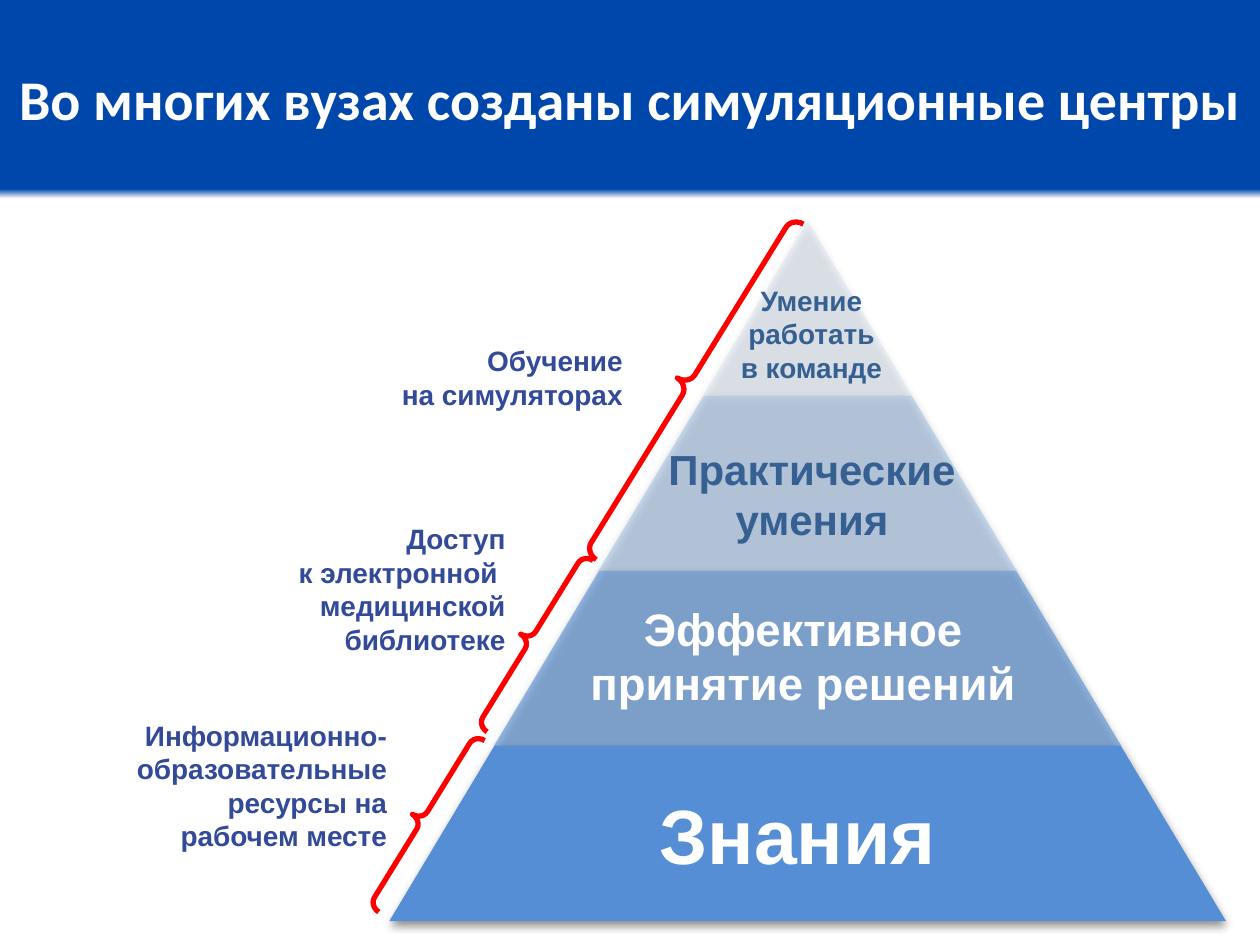
"""Build a slide with a four-level skills pyramid and braced notes."""
import copy
import dataclasses

import lxml.etree
import pptx
import pptx.dml.color
import pptx.enum.shapes
import pptx.enum.text
import pptx.oxml.ns
import pptx.util

Inches = pptx.util.Inches
Pt = pptx.util.Pt
Align = pptx.enum.text.PP_ALIGN
Kind = pptx.enum.shapes.MSO_SHAPE
qn = pptx.oxml.ns.qn


@dataclasses.dataclass(frozen=True)
class Theme:
    band: str = "0047AB"
    white: str = "FFFFFF"
    note: str = "324A98"
    dark: str = "376092"
    brace: str = "FF0000"
    shade: str = "000000"
    tiers: tuple = (("C6D9F1", 28), ("8EB4E3", 44), ("558ED5", 61), ("558ED5", 100))
    head: int = 32
    huge: int = 44
    large: int = 26
    mid: int = 24
    small: int = 16
    line: int = 3


THEME = Theme()

NOTES = (
    ("Обучение\nна симуляторах", (2.15, 2.68, 2.89, 0.64)),
    ("Доступ\nк электронной \nмедицинской\nбиблиотеке", (1.92, 4.09, 2.19, 1.18)),
    ("Информационно-образовательные ресурсы на рабочем месте", (0.75, 5.65, 2.42, 1.18)),
)
BRACES = ((3.26, 5.71, 0.18, 1.6), (4.12, 4.28, 0.18, 1.6), (5.36, 1.49, 0.21, 3.13))
LABELS = (
    ("Знания", (5.12, 6.2, 2.42, 0.84), THEME.huge, THEME.white),
    ("Эффективное принятие решений", (4.58, 4.72, 3.59, 0.98), THEME.large, THEME.white),
    ("Практические умения", (5.08, 3.47, 2.73, 0.91), THEME.mid, THEME.dark),
    ("Умение работать\nв команде", (5.62, 2.2, 1.64, 0.91), THEME.small, THEME.dark),
)


def color(code):
    return pptx.dml.color.RGBColor.from_string(code)


def place(box):
    return [Inches(side) for side in box]


def add_alpha(node, share):
    lxml.etree.SubElement(node, qn("a:alpha"), val=str(share * 1000))


def paint_back(slide):
    fill = slide.background.fill
    fill.gradient()
    fill.gradient_angle = 270
    stops = slide.element.find(".//" + qn("a:gsLst"))
    for stop in list(stops)[:2]:
        stops.append(copy.deepcopy(stop))
    codes = (THEME.band, THEME.band, THEME.white, THEME.white)
    for stop, code, spot in zip(fill.gradient_stops, codes, (0, 0.2, 0.21, 1)):
        stop.color.rgb = color(code)
        stop.position = spot


def add_text(slide, text, box, size, code, align, font="Arial"):
    frame = slide.shapes.add_textbox(*place(box)).text_frame
    frame.word_wrap = True
    frame.auto_size = pptx.enum.text.MSO_AUTO_SIZE.SHAPE_TO_FIT_TEXT
    para = frame.paragraphs[0]
    para.text = text
    para.alignment = align
    para.font.name = font
    para.font.size = Pt(size)
    para.font.bold = True
    para.font.color.rgb = color(code)
    return frame


def add_shadow(shape):
    shape.shadow.inherit = False
    effects = shape.element.spPr.find(qn("a:effectLst"))
    outer = lxml.etree.SubElement(
        effects, qn("a:outerShdw"), blurRad=str(Pt(5)), dist=str(Pt(2)),
        dir="5400000", rotWithShape="0")
    tint = lxml.etree.SubElement(outer, qn("a:srgbClr"), val=THEME.shade)
    add_alpha(tint, 43)


def add_tiers(slide):
    group = slide.shapes.add_group_shape()
    step, rise, mid, top = 1.66, 1.39, 6.41, 1.75
    for row, (code, share) in enumerate(THEME.tiers):
        width = step * (row + 1)
        box = (mid - width / 2, top + rise * row, width, rise)
        tier = group.shapes.add_shape(Kind.TRAPEZOID, *place(box))
        tier.adjustments[0] = 0.6
        tier.fill.solid()
        tier.fill.fore_color.rgb = color(code)
        if share < 100:
            add_alpha(tier.element.spPr.find(".//" + qn("a:srgbClr")), share)
        tier.line.fill.background()
        add_shadow(tier)


def add_brace(slide, box):
    brace = slide.shapes.add_shape(Kind.RIGHT_BRACE, *place(box))
    brace.rotation = 211.7
    brace.adjustments[0] = 0.45
    brace.fill.background()
    brace.line.color.rgb = color(THEME.brace)
    brace.line.width = Pt(THEME.line)
    brace.shadow.inherit = False


def main():
    deck = pptx.Presentation()
    deck.slide_width, deck.slide_height = Inches(10), Inches(7.5)
    slide = deck.slides.add_slide(deck.slide_layouts[6])
    paint_back(slide)
    add_tiers(slide)
    for text, box in NOTES:
        add_text(slide, text, box, THEME.small, THEME.note, Align.RIGHT)
    for box in BRACES:
        add_brace(slide, box)
    for text, box, size, code in LABELS:
        add_text(slide, text, box, size, code, Align.CENTER)
    title = add_text(slide, "Во многих вузах созданы симуляционные центры",
                     (0, 0, 10, 1.55), THEME.head, THEME.white, Align.CENTER, "Calibri")
    title.auto_size = pptx.enum.text.MSO_AUTO_SIZE.NONE
    title.vertical_anchor = pptx.enum.text.MSO_ANCHOR.MIDDLE
    deck.save("out.pptx")


if __name__ == "__main__":
    main()
